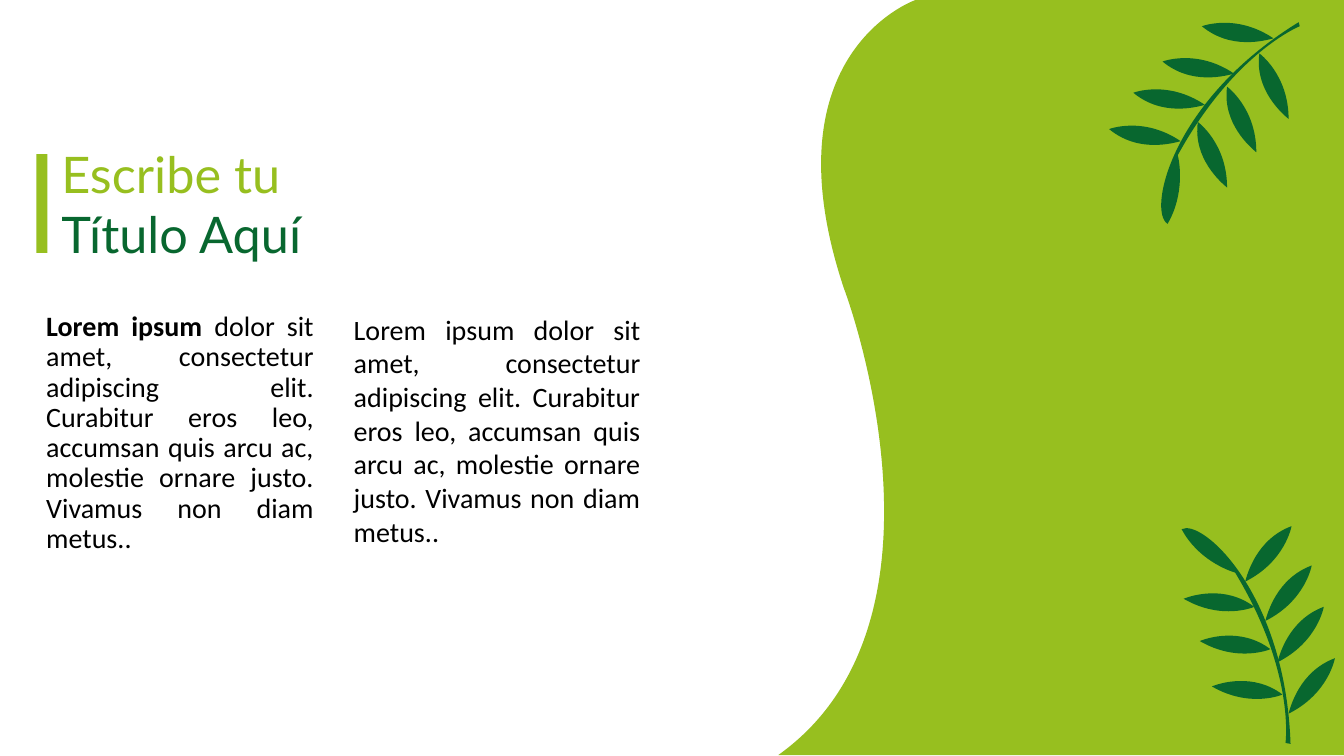
from math import cos, radians, sin

from lxml.etree import SubElement
from pptx import Presentation
from pptx.dml.color import RGBColor
from pptx.enum.shapes import MSO_SHAPE
from pptx.enum.text import MSO_AUTO_SIZE as AutoSize, PP_ALIGN as Align
from pptx.oxml.ns import qn
from pptx.util import Pt

PX = 9144
LIME, FOREST, BLACK = "97BF1F", "08672F", "000000"

OPENING = "Lorem ipsum "
REST = ("dolor sit amet, consectetur adipiscing elit. Curabitur eros leo, accumsan "
        "quis arcu ac, molestie ornare justo. Vivamus non diam metus..")

WAVE = [(908, 0), (908, 0), (759, 52), (837, 286), (847, 312), (953, 620), (772, 749),
        (908, 749), (1333, 749), (1333, 749), (1333, 0), (1333, 0), (1333, 0)]

LOWER_TURN = 285
LOWER_STEM = [(1275, 737), (1275, 737), (1285, 667), (1225, 568), (1218, 566),
              (1188, 555), (1172, 525), (1192, 514), (1275, 588), (1280, 738),
              (1275, 737), (1275, 737), (1275, 737)]
LOWER_LEAVES = [
    ([(0, 0), (0, 0), (-32, 14), (-70, -8), (-63, -11), (-29, -22), (0, 0)],
     [(1272, 689), (1260, 644), (1244, 602)]),
    ([(0, 0), (0, 0), (-6, 35), (-46, 55), (-44, 48), (-35, 13), (0, 0)],
     [(1324, 653), (1313, 602), (1301, 561), (1281, 522)]),
]

UPPER_TURN = 165
UPPER_STEM = [(1289, 26), (1289, 26), (1224, 52), (1168, 154), (1170, 161),
              (1175, 193), (1158, 222), (1138, 210), (1161, 100), (1288, 22),
              (1289, 26), (1289, 26), (1289, 26)]
UPPER_LEAVES = [
    ([(0, 0), (0, 0), (29, 21), (29, 65), (23, 60), (-5, 36), (0, 0)],
     [(1249, 53), (1217, 86), (1188, 121)]),
    ([(0, 0), (0, 0), (34, -13), (71, 12), (63, 14), (29, 24), (0, 0)],
     [(1192, 26), (1153, 61), (1124, 92), (1100, 128)]),
]


def px(*lengths):
    return [round(length * PX) for length in lengths]


def colour(hex_code):
    return RGBColor.from_string(hex_code)


def paint(shape, hex_code):
    shape.shadow.inherit = False
    shape.fill.solid()
    shape.fill.fore_color.rgb = colour(hex_code)
    shape.line.fill.background()


def turned(point, degrees):
    x, y = point
    c, s = cos(radians(degrees)), sin(radians(degrees))
    return x * c - y * s, x * s + y * c


def unturned_outline(outline, turn):
    upright = [turned(point, -turn) for point in outline]
    centre = [(min(axis) + max(axis)) / 2 for axis in zip(*upright)]
    target = turned(centre, turn)
    return [(x + target[0] - centre[0], y + target[1] - centre[1]) for x, y in upright]


def bend(shape):
    lines = list(shape._element.iter(qn("a:lnTo")))
    for i in range(0, len(lines), 3):
        curve = SubElement(lines[i].getparent(), qn("a:cubicBezTo"))
        lines[i].addprevious(curve)
        for line in lines[i:i + 3]:
            curve.append(line[0])
            line.getparent().remove(line)


def add_curved(shapes, outline, hex_code, origin=(0, 0), turn=0):
    placed = [(x + origin[0], y + origin[1]) for x, y in outline]
    knots = [px(*point) for point in unturned_outline(placed, turn)]
    builder = shapes.build_freeform(*knots[0], scale=1.0)
    builder.add_line_segments(knots[1:], close=False)
    builder.add_line_segments([], close=True)
    shape = builder.convert_to_shape()
    bend(shape)
    shape.rotation = turn
    paint(shape, hex_code)


def add_branch(slide, stem, leaves, turn):
    branch = slide.shapes.add_group_shape().shapes
    add_curved(branch, stem, FOREST, turn=turn)
    for leaf, tips in leaves:
        for tip in tips:
            add_curved(branch, leaf, FOREST, tip, turn)


def add_bar(slide, box, hex_code):
    paint(slide.shapes.add_shape(MSO_SHAPE.RECTANGLE, *px(*box)), hex_code)


def add_text_frame(slide, box, auto_size):
    frame = slide.shapes.add_textbox(*px(*box)).text_frame
    frame.word_wrap = True
    frame.auto_size = auto_size
    return frame


def style(paragraph, typeface, size, hex_code):
    paragraph.font.name = typeface
    paragraph.font.size = Pt(size)
    paragraph.font.color.rgb = colour(hex_code)


def add_title(slide, box, lines):
    frame = add_text_frame(slide, box, AutoSize.SHAPE_TO_FIT_TEXT)
    frame.text = "\n".join(text for text, _ in lines)
    for paragraph, (_, hex_code) in zip(frame.paragraphs, lines):
        style(paragraph, "Lato", 36, hex_code)


def add_body(slide, box, texts, auto_size):
    paragraph = add_text_frame(slide, box, auto_size).paragraphs[0]
    for text in texts:
        paragraph.add_run().text = text
    paragraph.alignment = Align.JUSTIFY
    style(paragraph, "Calibri", 20, BLACK)
    return paragraph


def main():
    deck = Presentation()
    deck.slide_width, deck.slide_height = px(1333, 750)
    slide = deck.slides.add_slide(deck.slide_layouts[6])

    add_curved(slide.shapes, WAVE, LIME)

    lead = add_body(slide, (36, 305, 285, 246), [OPENING, REST], AutoSize.NONE)
    lead.line_spacing = 0.9
    lead.space_before = Pt(10)
    lead.runs[0].font.bold = True

    add_title(slide, (51, 137, 554, 131), [("Escribe tu", LIME), ("Título Aquí", FOREST)])
    add_bar(slide, (36, 153, 11, 98), LIME)
    add_body(slide, (341, 305, 304, 246), [OPENING + REST], AutoSize.SHAPE_TO_FIT_TEXT)

    add_branch(slide, LOWER_STEM, LOWER_LEAVES, LOWER_TURN)
    add_branch(slide, UPPER_STEM, UPPER_LEAVES, UPPER_TURN)

    deck.save("out.pptx")


if __name__ == "__main__":
    main()
